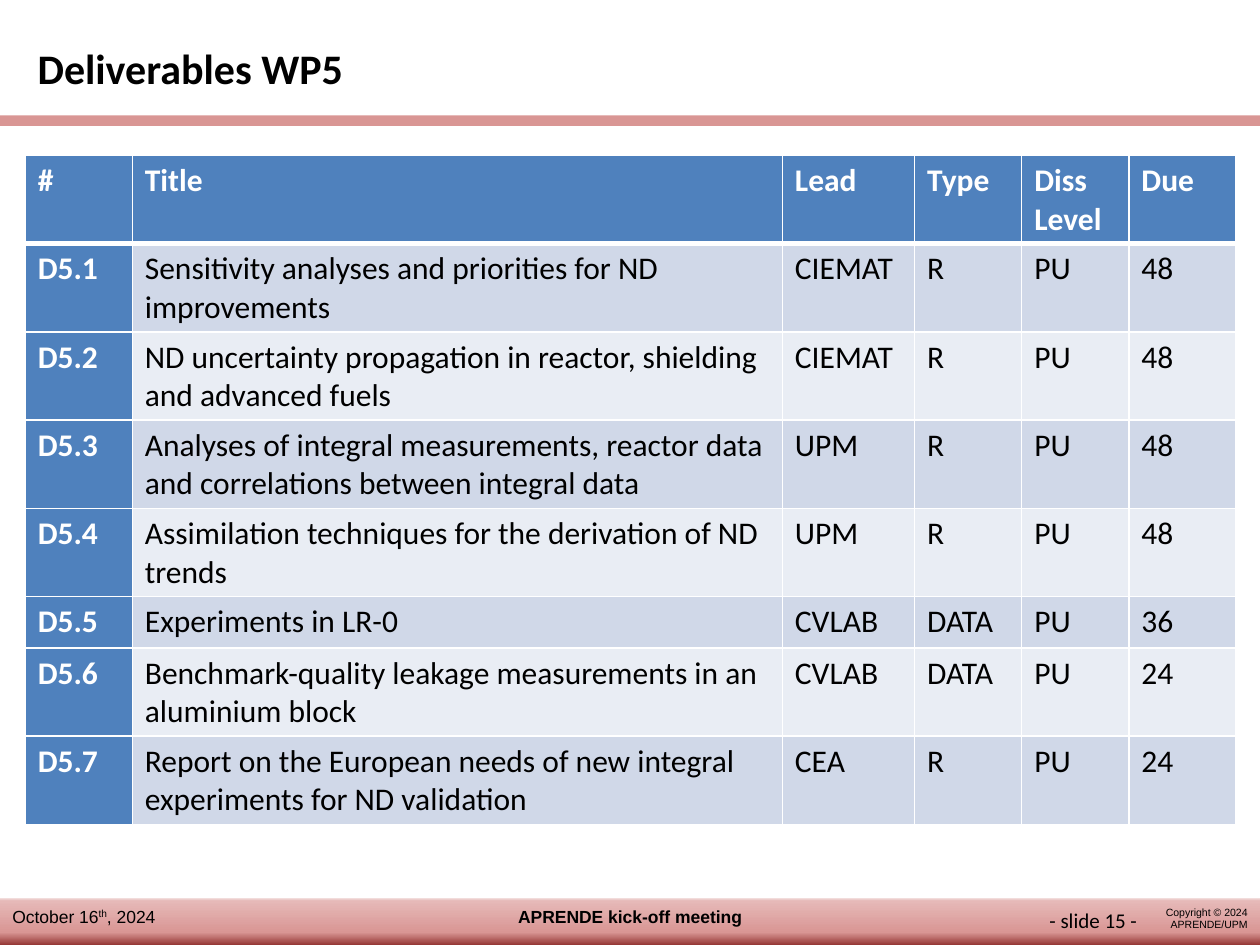
from dataclasses import dataclass

from lxml.etree import SubElement
from pptx import Presentation
from pptx.dml.color import RGBColor as Color
from pptx.enum.shapes import MSO_SHAPE as Shape
from pptx.enum.text import MSO_AUTO_SIZE as AutoSize, PP_ALIGN as Align
from pptx.oxml.ns import qn
from pptx.util import Pt


@dataclass(frozen=True)
class Theme:
    text: str = "000000"
    inverse: str = "FFFFFF"
    header: str = "4F81BD"
    bands: tuple = ("D0D8E8", "E9EDF4")
    rule: str = "D99694"
    footer: tuple = ((0, "953735"), (27, "D99694"), (94, "E6B9B8"), (100, "F2DCDB"))
    body_font: str = "Calibri"
    footer_font: str = "Arial"
    title_size: float = 24
    table_size: float = 18
    number_size: float = 12
    footer_size: float = 10
    copyright_size: float = 6


THEME = Theme()
PAGE_WIDTH, PAGE_HEIGHT = 720, 540
COLUMN_WIDTHS = (61.2, 371.5, 75.6, 61.2, 61.2, 61.2)
SINGLE_ROW, DOUBLE_ROW = 29.2, 50.4
HEADINGS = ("#", "Title", "Lead", "Type", "Diss\nLevel", "Due")
DELIVERABLES = (
    ("Sensitivity analyses and priorities for ND improvements", "CIEMAT", "R", 48),
    ("ND uncertainty propagation in reactor, shielding and advanced fuels", "CIEMAT", "R", 48),
    ("Analyses of integral measurements, reactor data and correlations between integral data",
     "UPM", "R", 48),
    ("Assimilation techniques for the derivation of ND trends", "UPM", "R", 48),
    ("Experiments in LR-0", "CVLAB", "DATA", 36),
    ("Benchmark-quality leakage measurements in an aluminium block", "CVLAB", "DATA", 24),
    ("Report on the European needs of new integral experiments for ND validation",
     "CEA", "R", 24),
)


def write(frame, text, *, size, font=THEME.body_font, color=THEME.text, bold=False,
          align=Align.LEFT):
    for index, line in enumerate(text.split("\n")):
        para = frame.paragraphs[0] if index == 0 else frame.add_paragraph()
        para.alignment = align
        for position, part in enumerate(line.split("^")):
            span = para.add_run()
            span.text = part
            span.font.size = Pt(size)
            span.font.name = font
            span.font.bold = bold
            span.font.color.rgb = Color.from_string(color)
            if position % 2:
                span.font._element.set("baseline", "30000")


def add_text(page, text, left, top, width, height, *, wrap=True, **style):
    box = page.shapes.add_textbox(Pt(left), Pt(top), Pt(width), Pt(height))
    box.text_frame.word_wrap = wrap
    box.text_frame.auto_size = AutoSize.SHAPE_TO_FIT_TEXT
    write(box.text_frame, text, **style)


def add_band(page, top, height):
    band = page.shapes.add_shape(Shape.RECTANGLE, 0, Pt(top), Pt(PAGE_WIDTH), Pt(height))
    band.shadow.inherit = False
    band.line.fill.background()
    return band


def add_rule(page):
    rule = add_band(page, 66, 6)
    rule.fill.solid()
    rule.fill.fore_color.rgb = Color.from_string(THEME.rule)


def add_footer_band(page):
    band = add_band(page, 513.2, PAGE_HEIGHT - 513.2)
    band.fill.gradient()
    band.fill.gradient_angle = 90
    stops = next(band._element.iter(qn("a:gsLst")))
    for stop in list(stops):
        stops.remove(stop)
    for percent, color in THEME.footer:
        stop = SubElement(stops, qn("a:gs"), pos=str(percent * 1000))
        SubElement(stop, qn("a:srgbClr"), val=color)


def set_borders(cell, top, bottom):
    properties = cell._tc.get_or_add_tcPr()
    for side, weight in (("L", 1), ("R", 1), ("T", top), ("B", bottom)):
        line = SubElement(properties, qn(f"a:ln{side}"), w=str(Pt(weight)))
        fill = SubElement(line, qn("a:solidFill"))
        SubElement(fill, qn("a:srgbClr"), val=THEME.inverse)


def add_deliverables(page, left, top):
    rows = [HEADINGS]
    for number, (title, lead, kind, due) in enumerate(DELIVERABLES, 1):
        rows.append((f"D5.{number}", title, lead, kind, "PU", str(due)))
    heights = [SINGLE_ROW if row[1].startswith("Experiments") else DOUBLE_ROW for row in rows]
    frame = page.shapes.add_table(len(rows), len(HEADINGS), Pt(left), Pt(top),
                                  Pt(sum(COLUMN_WIDTHS)), Pt(sum(heights)))
    table = frame.table
    table.first_col = True
    for column, width in zip(table.columns, COLUMN_WIDTHS):
        column.width = Pt(width)
    for r, (row, height) in enumerate(zip(rows, heights)):
        table.rows[r].height = Pt(height)
        for c, text in enumerate(row):
            cell = table.cell(r, c)
            heading = r == 0 or c == 0
            set_borders(cell, 3 if r == 1 else 1, 3 if r == 0 else 1)
            cell.fill.solid()
            cell.fill.fore_color.rgb = Color.from_string(
                THEME.header if heading else THEME.bands[(r - 1) % 2])
            write(cell.text_frame, text, size=THEME.table_size, bold=heading,
                  color=THEME.inverse if heading else THEME.text)


def add_footer(page):
    add_footer_band(page)
    style = {"size": THEME.footer_size, "font": THEME.footer_font}
    add_text(page, "October 16^th^, 2024", 0, 514, 200, 19.4, **style)
    add_text(page, "APRENDE kick-off meeting", 260, 514, 200, 19.4,
             bold=True, align=Align.CENTER, **style)
    add_text(page, "Copyright © 2024\nAPRENDE/UPM", 654.5, 514, 65.5, 21.6,
             size=THEME.copyright_size, font=THEME.footer_font, align=Align.RIGHT)


def main():
    deck = Presentation()
    deck.slide_width, deck.slide_height = Pt(PAGE_WIDTH), Pt(PAGE_HEIGHT)
    page = deck.slides.add_slide(deck.slide_layouts[6])
    add_footer(page)
    add_rule(page)
    add_text(page, "Deliverables WP5", 14.4, 21, 360, 36, size=THEME.title_size, bold=True)
    add_deliverables(page, 14.4, 88.8)
    add_text(page, "- slide 15 -", 592.6, 514.8, 67, 21.6, wrap=False, size=THEME.number_size)
    deck.save("out.pptx")


if __name__ == "__main__":
    main()
